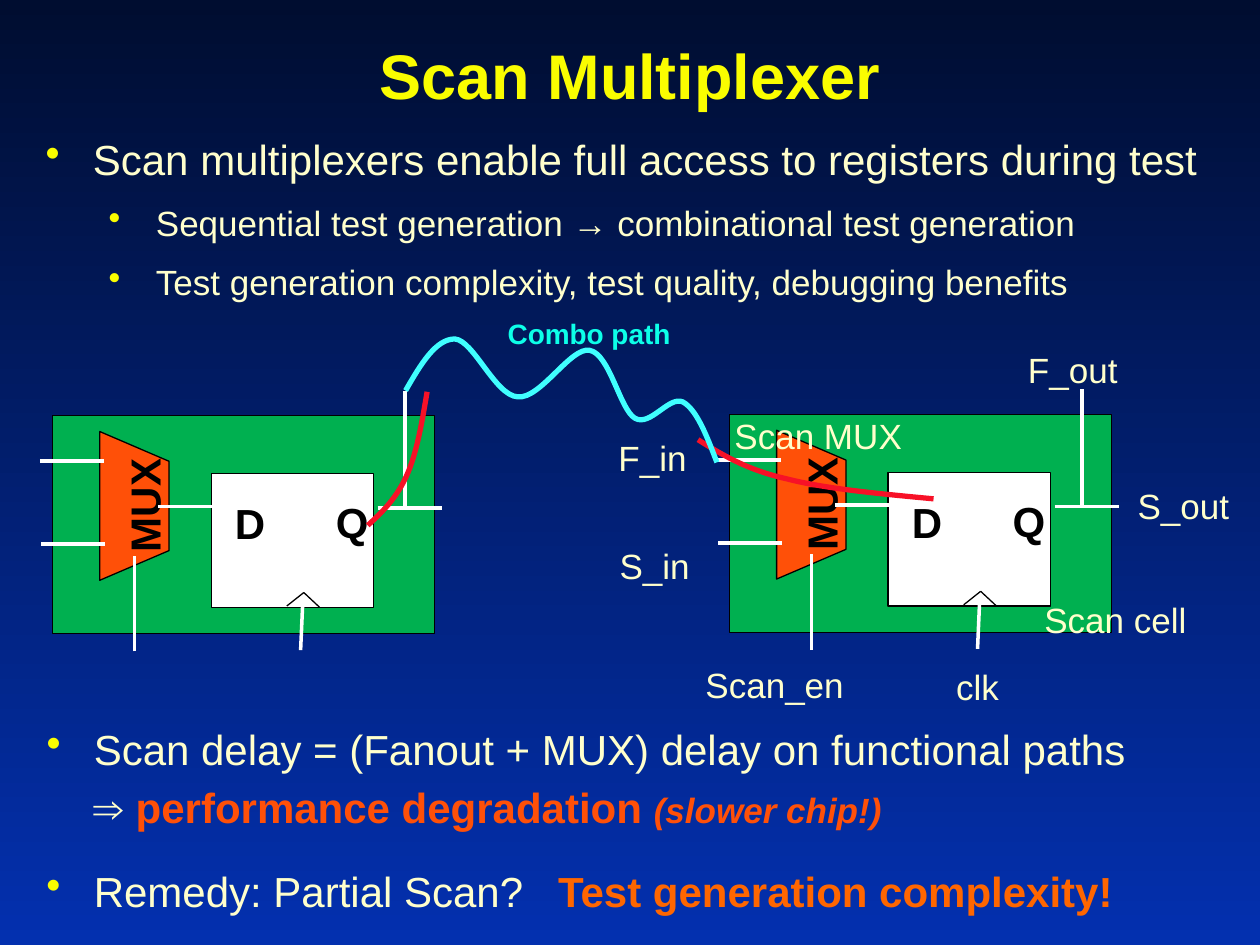
import pptx
import pptx.util
import pptx.dml.color
import pptx.enum.shapes
import pptx.enum.text
import pptx.oxml
import pptx.oxml.ns
import lxml.etree

Pt = pptx.util.Pt
Kind = pptx.enum.shapes.MSO_SHAPE
qn = pptx.oxml.ns.qn


class Theme:
    font = "Arial"
    top, low = "000D30", "0330AF"
    green, red_mux, white, black = "00B050", "FF5008", "FFFFFF", "000000"
    mark, path_red, path_blue = "FAFD00", "F71127", "40FFFF"
    # name: size, colour, bold, italic
    text = {
        "title": (36, "FAFD00", True, False),
        "main": (24, "FFFFCC", False, False),
        "sub": (20, "FFFFCC", False, False),
        "pin": (24, "000000", True, False),
        "warn": (24, "FF5008", True, False),
        "aside": (20, "FF5008", True, True),
        "combo": (16, "0DFFE8", True, False),
        "cost": (24, "FF6600", True, False),
    }


# Text blocks: box, then paragraphs of (indent kind, runs)
BLOCKS = [
    ((19, 65.5, 680, 130), [
        ("bullet", [("Scan multiplexers enable full access to registers during test", "main")]),
        ("nested", [("Sequential test generation → combinational test generation", "sub")]),
        ("nested", [("Test generation complexity, test quality, debugging benefits", "sub")])]),
    ((19.5, 402.5, 675, 78.5), [
        ("bullet", [("Scan delay = (Fanout + MUX) delay on functional paths", "main")]),
        ("follow", [("⇒ ", "main"), ("performance degradation ", "warn"),
                    ("(slower chip!)", "aside")])]),
    ((19.5, 484, 297, 39), [("bullet", [("Remedy: Partial Scan?", "main")])]),
]

# Free labels: words, style, box
LABELS = [
    ("Scan_en", "sub", (396, 369.4, 94.3, 31.7)),
    ("clk", "sub", (539.3, 370.8, 39.6, 31.7)),
    ("S_in", "sub", (347, 301.7, 54.7, 31.7)),
    ("F_in", "sub", (346.3, 239.8, 54, 31.7)),
    ("S_out", "sub", (643, 267.1, 67, 34.5)),
    ("F_out", "sub", (580.3, 189.4, 66.2, 34.5)),
    ("Scan MUX", "sub", (412.6, 227.5, 110.9, 34.5)),
    ("Scan cell", "sub", (589.7, 332.6, 96.5, 34.5)),
    ("Combo path", "combo", (283, 172.8, 108.7, 31)),
    ("Test generation complexity!", "cost", (311.8, 484, 334.8, 42.5)),
]

# Scan cell, measured from its top left corner
CELLS = [(30, 237.6), (416.8, 236.9)]
BODY = (0, 0, 218.2, 124.6)
MUX = (4.3, 31.7, 85, 39.6)
FLOP = (90.7, 33.1, 92.9, 76.3)
PINS = [("MUX", (5.8, 31, 82.8, 40.3)), ("D", (97.2, 36, 27.4, 32.4)),
        ("Q", (154.8, 35.3, 28.1, 32.4))]
WIRES = [(60.5, 51.8, 97.2, 51.8), (185.8, 52.6, 222.5, 52.6),
         (-6.5, 73.4, 30.2, 73.4), (-7.2, 25.9, 29.5, 25.9),
         (46.8, 134.6, 46.8, 79.9), (141.8, 133.9, 143, 106.6)]
CLOCK = [(133.9, 108.7, 143.6, 101), (143.6, 101, 152.6, 109.4)]
FANOUTS = [(231.2, 289.4, 231.2, 223.5), (618.4, 288.7, 618.4, 222.5)]

# Curves: colour, start and then three Bezier points per piece
CURVES = [
    (Theme.path_red, [(398.9, 251.3), (412.6, 259.9), (427, 268.6), (449.3, 273.6),
                      (471.6, 279.4), (502.6, 282.2), (533.5, 285.1)]),
    (Theme.path_red, [(210.2, 300.2), (218.9, 292.3), (226.8, 284.4), (232.6, 271.4),
                      (238.3, 258.5), (241.2, 241.2), (244.1, 223.9)]),
    (Theme.path_blue, [(231.8, 223.2), (240.5, 208.1), (249.1, 193.7), (259.9, 193.7),
                       (270.7, 194.4), (283, 226.1), (295.9, 226.8),
                       (308.9, 228.2), (326.2, 198), (337, 200.2),
                       (348.5, 202.3), (354.2, 234), (362.9, 239),
                       (371.5, 244.1), (382.3, 226.1), (390.2, 229.7),
                       (398.2, 234), (403.9, 249.1), (409.7, 264.2)]),
]


def tint(code):
    return pptx.dml.color.RGBColor.from_string(code)


def stroke(shape, code, width):
    shape.line.color.rgb = tint(code)
    shape.line.width = Pt(width)


def set_para(para, kind, runs):
    para.line_spacing = 1.0 if kind == "follow" else 1.25
    para.space_before = Pt(0)
    props = para._p.get_or_add_pPr()
    gap = props.find(qn("a:spcBef"))
    gap.clear()
    lxml.etree.SubElement(gap, qn("a:spcPct")).set("val", "20000")
    if kind in ("bullet", "nested", "follow"):
        para.level = int(kind == "nested")
        props.set("marL", str(Pt(63 if kind == "nested" else 27)))
        props.set("indent", str(Pt(0 if kind == "follow" else -27)))
    if kind in ("bullet", "nested"):
        hue = lxml.etree.SubElement(props, qn("a:buClr"))
        lxml.etree.SubElement(hue, qn("a:srgbClr")).set("val", Theme.mark)
        lxml.etree.SubElement(props, qn("a:buChar")).set("char", "•")
    if kind == "center":
        para.alignment = pptx.enum.text.PP_ALIGN.CENTER
    for words, style in runs:
        run = para.add_run()
        run.text = words
        size, code, bold, slant = Theme.text[style]
        font = run.font
        font.name, font.size, font.bold, font.italic = Theme.font, Pt(size), bold, slant
        font.color.rgb = tint(code)


def add_text(shapes, box, paras, wrap=True, grow=False):
    shape = shapes.add_textbox(*map(Pt, box))
    frame = shape.text_frame
    frame.word_wrap = wrap
    if grow:
        frame.auto_size = pptx.enum.text.MSO_AUTO_SIZE.SHAPE_TO_FIT_TEXT
    for i, (kind, runs) in enumerate(paras):
        set_para(frame.add_paragraph() if i else frame.paragraphs[0], kind, runs)
    return shape


def add_block(shapes, kind, box, fill):
    shape = shapes.add_shape(kind, *map(Pt, box))
    shape.shadow.inherit = False
    shape.fill.solid()
    shape.fill.fore_color.rgb = tint(fill)
    stroke(shape, Theme.black, 0.75)
    return shape


def add_wire(shapes, ends, code, width):
    wire = shapes.add_connector(pptx.enum.shapes.MSO_CONNECTOR.STRAIGHT, *map(Pt, ends))
    stroke(wire, code, width)
    lxml.etree.SubElement(wire._element.spPr, qn("a:effectLst"))


def add_curve(shapes, code, points):
    spots = [(Pt(x), Pt(y)) for x, y in points]
    maker = shapes.build_freeform(*spots[0])
    maker.add_line_segments(spots[1:], close=False)
    curve = maker.convert_to_shape()
    curve.shadow.inherit = False
    curve.fill.background()
    stroke(curve, code, 3)
    # Join every three segments into one Bezier piece
    legs = curve._element.xpath(".//a:lnTo")
    for i in range(0, len(legs), 3):
        legs[i].tag = qn("a:cubicBezTo")
        for leg in legs[i + 1:i + 3]:
            legs[i].append(leg[0])
            leg.getparent().remove(leg)


def add_cell(slide, left, top):
    shapes = slide.shapes.add_group_shape().shapes

    def place(box):
        return (left + box[0], top + box[1], *box[2:])

    def span(ends):
        return (*place(ends[:2]), *place(ends[2:]))

    add_block(shapes, Kind.RECTANGLE, place(BODY), Theme.green)
    add_block(shapes, Kind.FLOWCHART_MANUAL_OPERATION, place(MUX), Theme.red_mux).rotation = 270
    add_block(shapes, Kind.RECTANGLE, place(FLOP), Theme.white)
    for name, box in PINS:
        kind = "left" if name == "Q" else "center"
        pin = add_text(shapes, place(box), [(kind, [(name, "pin")])], name == "MUX", True)
        pin.rotation = 270 if name == "MUX" else 0
    for ends in WIRES:
        add_wire(shapes, span(ends), Theme.white, 2)
    for ends in CLOCK:
        add_wire(shapes, span(ends), Theme.black, 0.75)


def main():
    deck = pptx.Presentation()
    deck.slide_width, deck.slide_height = Pt(720), Pt(540)
    slide = deck.slides.add_slide(deck.slide_layouts[6])
    shapes = slide.shapes

    # Background
    fill = slide.background.fill
    fill.gradient()
    fill.gradient_angle = 270
    for stop, code, spot in zip(fill.gradient_stops, (Theme.top, Theme.low), (0, 1)):
        stop.color.rgb, stop.position = tint(code), spot

    # Title and bullets
    title = add_text(shapes, (0, 15.8, 720, 51.8), [("center", [("Scan Multiplexer", "title")])])
    title.text_frame.vertical_anchor = pptx.enum.text.MSO_ANCHOR.BOTTOM
    for box, paras in BLOCKS:
        add_text(shapes, box, paras)

    # Scan cells, fanouts, paths and labels
    for left, top in CELLS:
        add_cell(slide, left, top)
    for ends in FANOUTS:
        add_wire(shapes, ends, Theme.white, 2.25)
    for code, points in CURVES:
        add_curve(shapes, code, points)
    for words, style, box in LABELS:
        add_text(shapes, box, [("left", [(words, style)])], False, True)
    deck.save("out.pptx")


if __name__ == "__main__":
    main()
